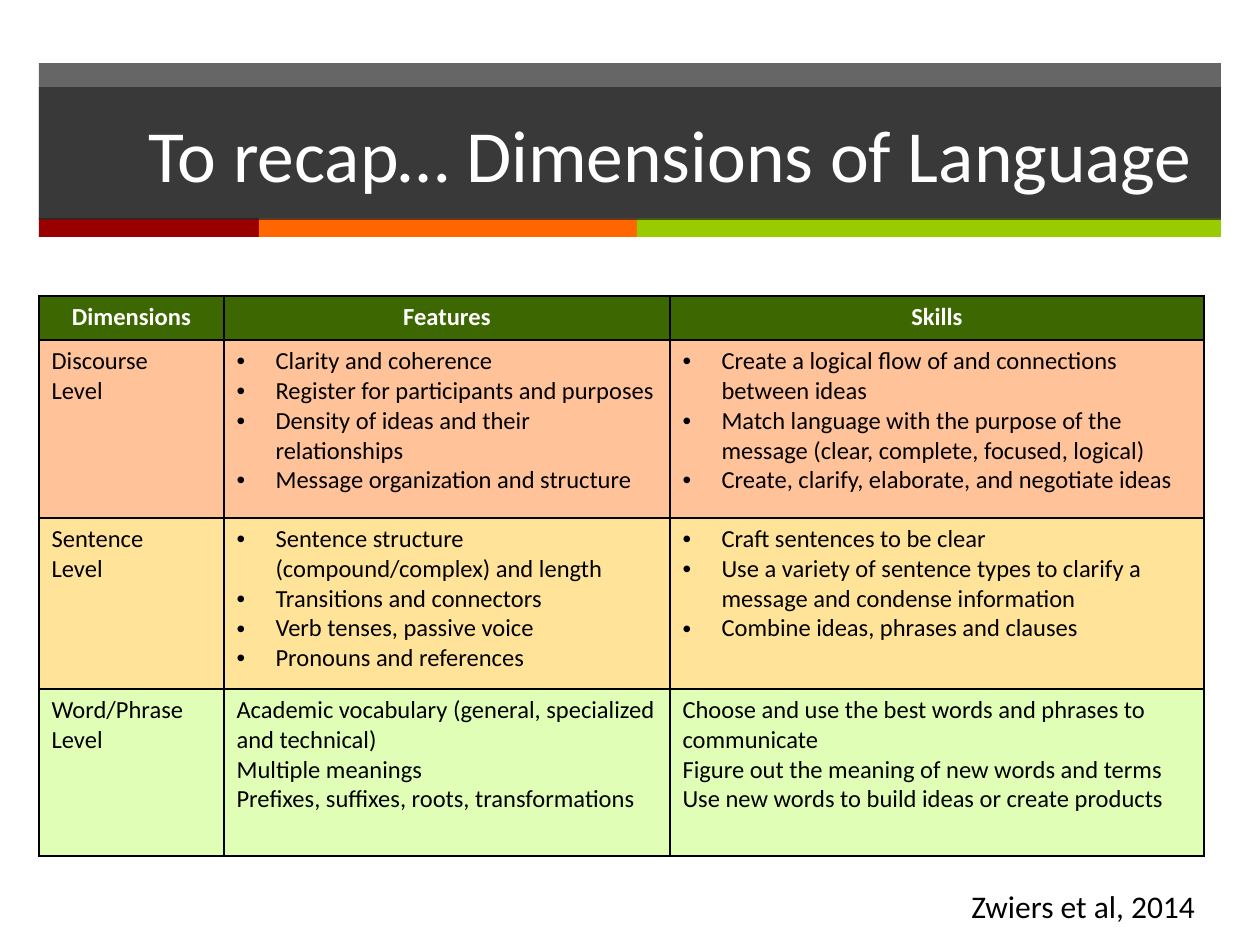
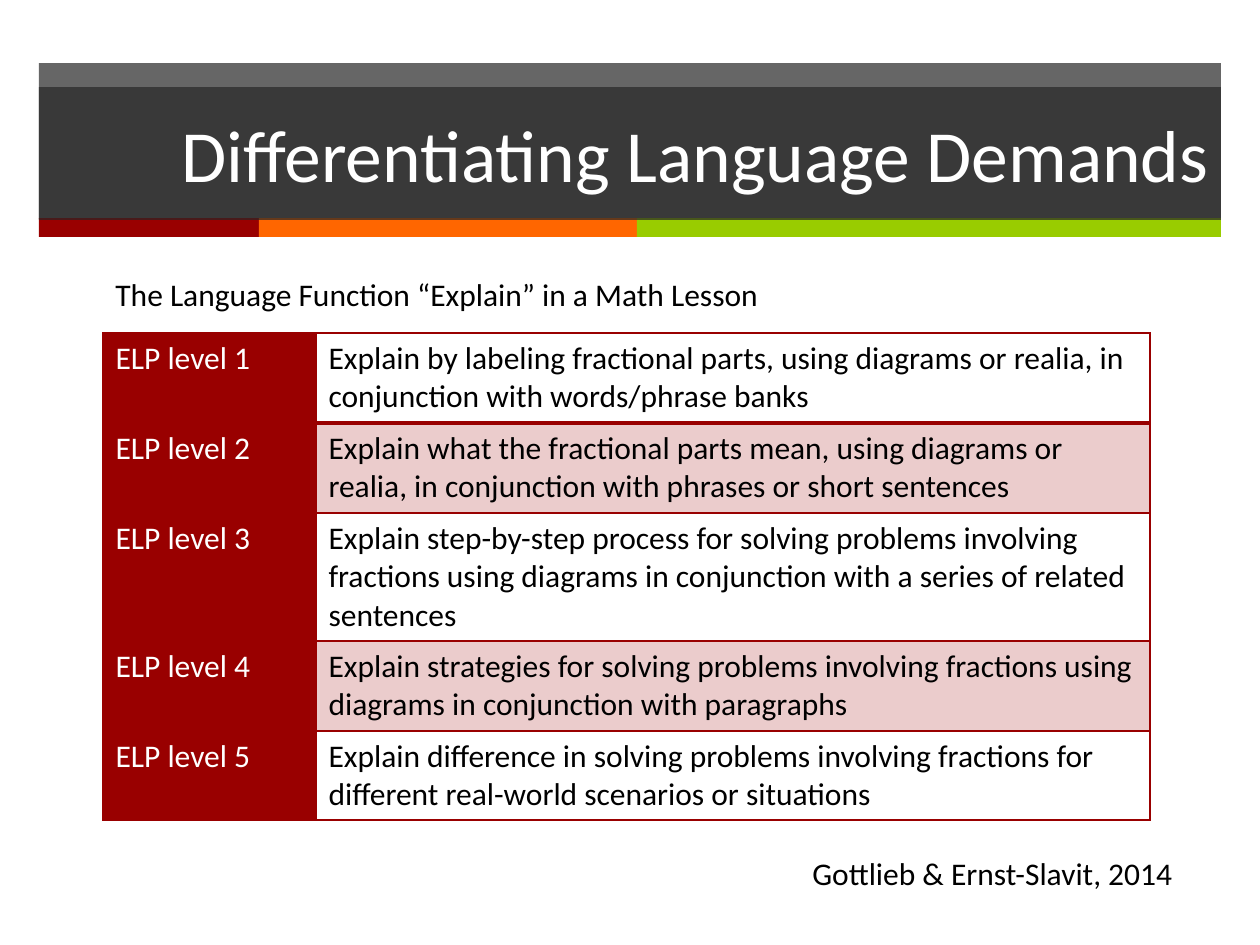
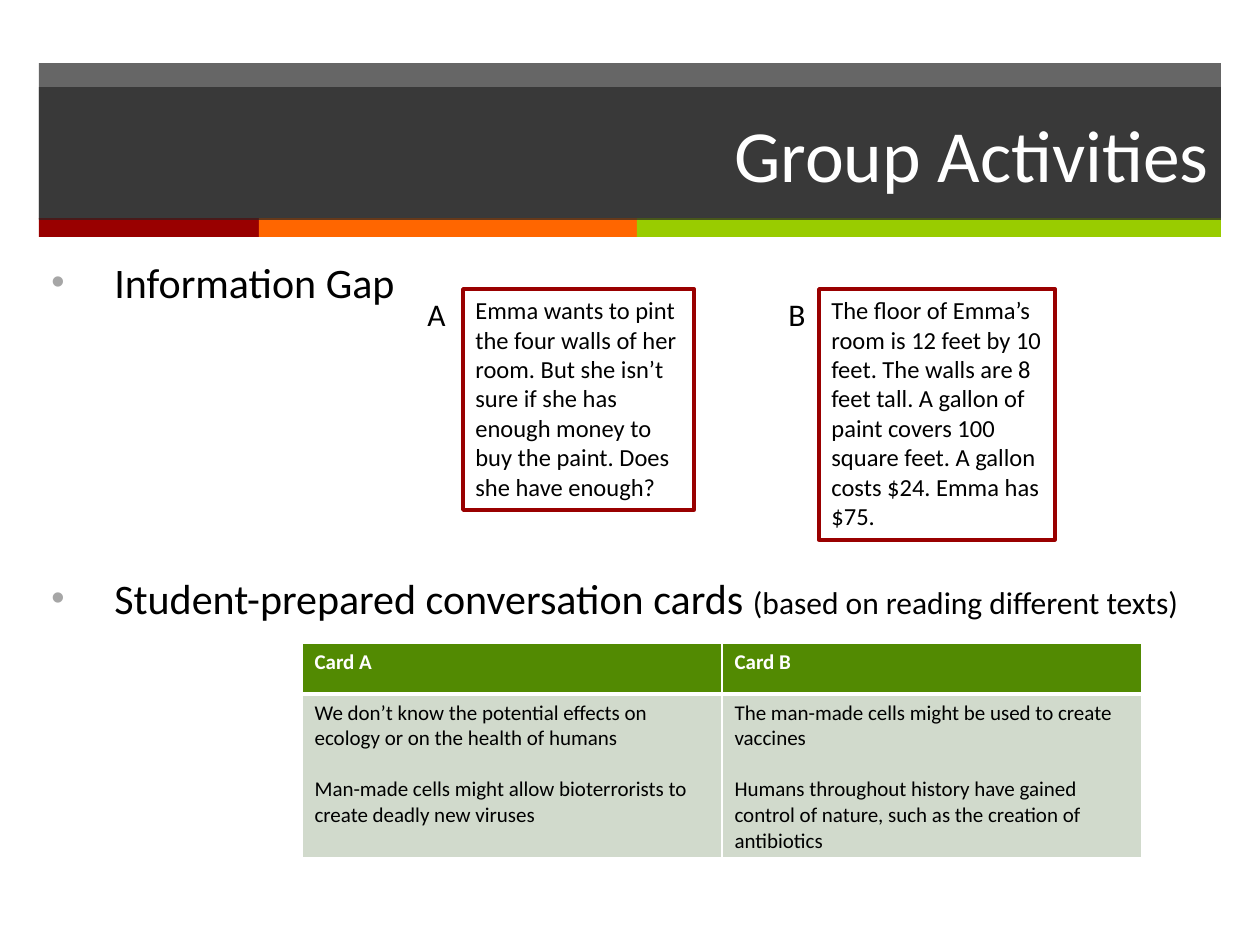
"""Build three slides on the dimensions and demands of language."""
from lxml.etree import SubElement as Sub
from pptx import Presentation
from pptx.dml.color import RGBColor
from pptx.enum.shapes import MSO_SHAPE as Kind
from pptx.enum.text import MSO_ANCHOR as Anchor, PP_ALIGN as Align
from pptx.oxml.ns import qn
from pptx.util import Emu, Pt

PX = 914400 / 126
FONT = "Calibri"
BLACK = RGBColor(0x00, 0x00, 0x00)
WHITE = RGBColor(0xFF, 0xFF, 0xFF)
DARK = RGBColor(0x26, 0x26, 0x26)
GRAY = RGBColor(0xA6, 0xA6, 0xA6)
RED = RGBColor(0x99, 0x00, 0x00)
ORANGE = RGBColor(0xFF, 0x66, 0x00)
LIME = RGBColor(0x99, 0xCC, 0x00)
PINK = RGBColor(0xEB, 0xCC, 0xCC)
FOREST = RGBColor(0x3D, 0x68, 0x01)
PEACH = RGBColor(0xFF, 0xC2, 0x99)
SAND = RGBColor(0xFF, 0xE3, 0x99)
MINT = RGBColor(0xE0, 0xFE, 0xB6)
GREEN = RGBColor(0x52, 0x8A, 0x02)
SAGE = RGBColor(0xD1, 0xDA, 0xCC)

STRIPES = [(RED, 220), (ORANGE, 378), (LIME, 584)]

RECAP = [
    ["Dimensions", "Features", "Skills"],
    ["Discourse\nLevel",
     "Clarity and coherence\n"
     "Register for participants and purposes\n"
     "Density of ideas and their relationships\n"
     "Message organization and structure",
     "Create a logical flow of and connections between ideas\n"
     "Match language with the purpose of the message "
     "(clear, complete, focused, logical)\n"
     "Create, clarify, elaborate, and negotiate ideas"],
    ["Sentence\nLevel",
     "Sentence structure (compound/complex) and length\n"
     "Transitions and connectors\n"
     "Verb tenses, passive voice\n"
     "Pronouns and references",
     "Craft sentences to be clear\n"
     "Use a variety of sentence types to clarify a message "
     "and condense information\n"
     "Combine ideas, phrases and clauses"],
    ["Word/Phrase Level",
     "Academic vocabulary (general, specialized and technical)\n"
     "Multiple meanings\n"
     "Prefixes, suffixes, roots, transformations",
     "Choose and use the best words and phrases to communicate\n"
     "Figure out the meaning of new words and terms\n"
     "Use new words to build ideas or create products"],
]
TINTS = [FOREST, PEACH, SAND, MINT]

LEVELS = [
    "Explain by labeling fractional parts, using diagrams or realia, "
    "in conjunction with words/phrase banks",
    "Explain what the fractional parts mean, using diagrams or realia, "
    "in conjunction with phrases or short sentences",
    "Explain step-by-step process for solving problems involving fractions "
    "using diagrams in conjunction with a series of related sentences",
    "Explain strategies for solving problems involving fractions "
    "using diagrams in conjunction with paragraphs",
    "Explain difference in solving problems involving fractions "
    "for different real-world scenarios or situations",
]

GAPS = [
    ("A", (415, 44), (463, 231, 221),
     "Emma wants to pint the four walls of her room. But she isn’t sure "
     "if she has enough money to buy the paint. Does she have enough?"),
    ("B", (776, 43), (819, 236, 251),
     "The floor of Emma’s room is 12 feet by 10 feet. The walls are 8 feet "
     "tall. A gallon of paint covers 100 square feet. A gallon costs $24. "
     "Emma has $75."),
]
TASKS = [("Information Gap", ""),
         ("Student-prepared conversation cards ",
          "(based on reading different texts)")]
CARDS = [
    ["Card A", "Card B"],
    ["We don’t know the potential effects on ecology or on the health "
     "of humans\n"
     "Man-made cells might allow bioterrorists to create deadly new viruses",
     "The man-made cells might be used to create vaccines\n"
     "Humans throughout history have gained control of nature, "
     "such as the creation of antibiotics"],
]


def px(*nums):
    return [Emu(round(n * PX)) for n in nums]


def style(frame, size, color=BLACK, bold=False, align=Align.LEFT):
    for par in frame.paragraphs:
        par.alignment = align
        for run in par.runs:
            font = run.font
            font.name, font.size, font.bold = FONT, Pt(size), bold
            font.color.rgb = color


def bullet(par, dent, color=None):
    props = par._p.get_or_add_pPr()
    props.set("marL", str(px(dent)[0]))
    props.set("indent", str(px(-dent)[0]))
    if color is not None:
        tone = Sub(props, qn("a:buClr"))
        Sub(tone, qn("a:srgbClr"), val=str(color))
        Sub(props, qn("a:buSzPct"), val="90000")
    Sub(props, qn("a:buFont"), typeface="Arial")
    Sub(props, qn("a:buChar"), char="•")


def block(slide, box, color, alpha=100):
    shape = slide.shapes.add_shape(Kind.RECTANGLE, *px(*box))
    shape.shadow.inherit = False
    shape.fill.solid()
    shape.fill.fore_color.rgb = color
    shape.line.fill.background()
    if alpha < 100:
        tone = shape.element.spPr.find(".//" + qn("a:srgbClr"))
        Sub(tone, qn("a:alpha"), val=str(alpha * 1000))
    return shape


def label(slide, box, text):
    frame = slide.shapes.add_textbox(*px(*box)).text_frame
    frame.word_wrap = False
    frame.text = text
    style(frame, 18)


def start(deck, title):
    slide = deck.slides.add_slide(deck.slide_layouts[6])
    block(slide, (39, 63, 1182, 156), DARK, 70)
    left = 39
    for color, width in STRIPES:
        block(slide, (left, 218, width, 19), color)
        left += width
    frame = block(slide, (39, 87, 1182, 133), DARK, 70).text_frame
    frame.word_wrap = True
    frame.vertical_anchor = Anchor.MIDDLE
    frame.text = title
    style(frame, 42, WHITE, align=Align.RIGHT)
    return slide


def edge(cell, color, top, low):
    props = cell._tc.get_or_add_tcPr()
    for side, width in zip("LRTB", (1, 1, top, low)):
        line = Sub(props, qn("a:ln" + side), w=str(Pt(width)))
        fill = Sub(line, qn("a:solidFill"))
        Sub(fill, qn("a:srgbClr"), val=str(color))


def grid(slide, spot, cols, rows, data, rule, size, look, head=1):
    shape = slide.shapes.add_table(len(rows), len(cols),
                                   *px(*spot, sum(cols), sum(rows)))
    table = shape.table
    table.first_row = table.horz_banding = False
    for col, width in zip(table.columns, px(*cols)):
        col.width = width
    for row, height in zip(table.rows, px(*rows)):
        row.height = height
    for r, texts in enumerate(data):
        for c, text in enumerate(texts):
            cell = table.cell(r, c)
            edge(cell, rule, head if r == 1 else 1, head if r == 0 else 1)
            fill, *font = look(r, c)
            if fill is None:
                cell.fill.background()
            else:
                cell.fill.solid()
                cell.fill.fore_color.rgb = fill
            cell.text_frame.text = text
            style(cell.text_frame, size, *font)
    return table


def recap(deck):
    def look(r, c):
        if r == 0:
            return FOREST, WHITE, True, Align.CENTER
        return TINTS[r], BLACK

    slide = start(deck, "To recap… Dimensions of Language ")
    table = grid(slide, (39, 296), (185, 446, 534), (44, 178, 171, 167),
                 RECAP, BLACK, 14, look)
    for r in (1, 2):
        for c in (1, 2):
            for par in table.cell(r, c).text_frame.paragraphs:
                bullet(par, 39)
    label(slide, (959, 881, 262, 51), "Zwiers et al, 2014")


def demands(deck):
    def look(r, c):
        if c == 0:
            return RED, WHITE
        return (PINK if r % 2 else None), BLACK

    slide = start(deck, "Differentiating Language Demands")
    data = [[f"ELP level {n}", text] for n, text in enumerate(LEVELS, 1)]
    grid(slide, (103, 333), (213, 834), (90, 90, 128, 90, 89),
         data, RED, 18, look, 2)
    label(slide, (103, 269, 675, 51),
          "The Language Function “Explain” in a Math Lesson")
    label(slide, (800, 848, 392, 51), "Gottlieb & Ernst-Slavit, 2014")


def groups(deck):
    def look(r, c):
        return (SAGE, BLACK) if r else (GREEN, WHITE, True)

    slide = start(deck, "Group Activities")
    frame = slide.shapes.add_textbox(*px(39, 250, 1196, 390)).text_frame
    frame.word_wrap = True
    frame.text = "\n".join(main for main, note in TASKS)
    style(frame, 24)
    frame.paragraphs[1].space_before = Pt(152)
    for par, (main, note) in zip(frame.paragraphs, TASKS):
        bullet(par, 63, GRAY)
        if note:
            run = par.add_run()
            run.text = note
            run.font.name, run.font.size = FONT, Pt(18)
            run.font.color.rgb = BLACK
    for name, (left, width), (x, wide, high), text in GAPS:
        card = block(slide, (x, 289, wide, high), WHITE)
        card.line.color.rgb = RED
        card.line.width = Pt(2)
        frame = card.text_frame
        frame.word_wrap = True
        frame.vertical_anchor = Anchor.TOP
        frame.text = text
        style(frame, 14)
        label(slide, (left, 289, width, 51), name)
    table = grid(slide, (302, 643), (420, 420), (51, 163),
                 CARDS, WHITE, 12, look, 3)
    for c in (0, 1):
        table.cell(1, c).text_frame.paragraphs[1].space_before = Pt(14.6)


def main():
    deck = Presentation()
    deck.slide_width, deck.slide_height = px(1260, 945)
    recap(deck)
    demands(deck)
    groups(deck)
    deck.save("out.pptx")


if __name__ == "__main__":
    main()
